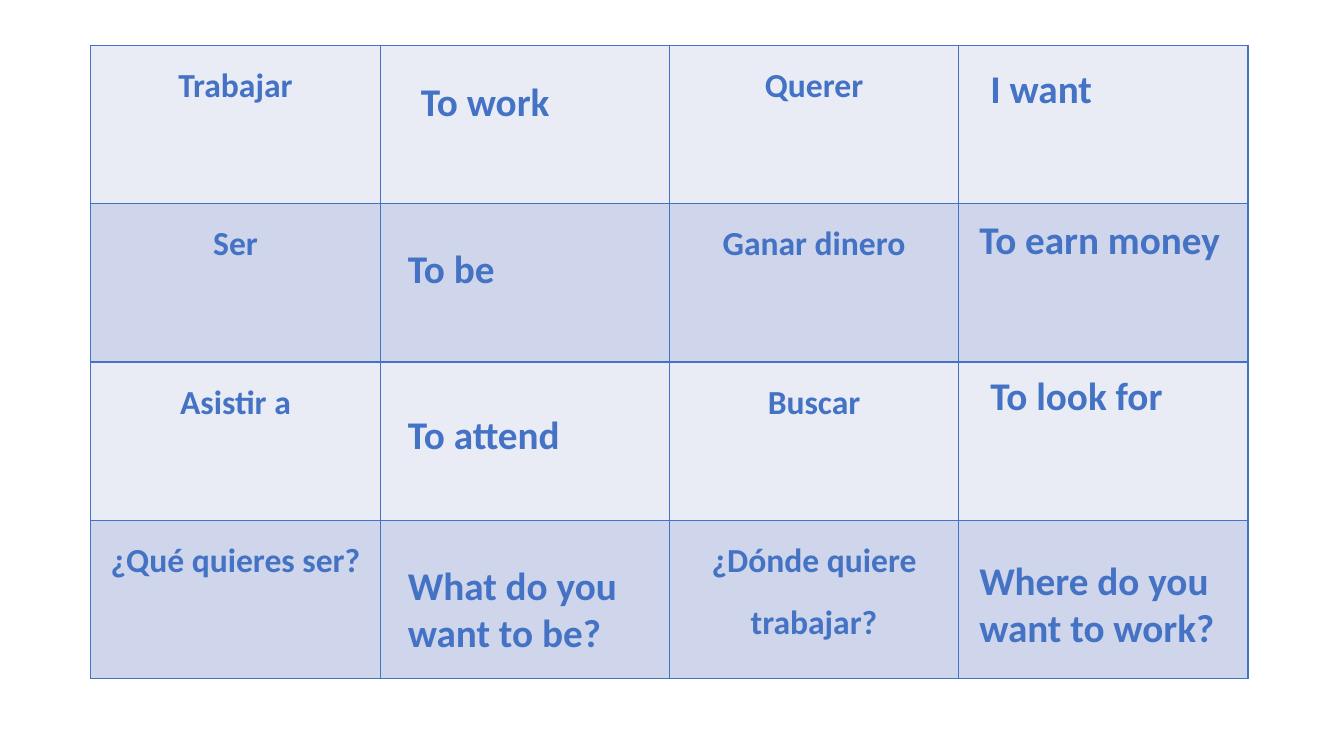
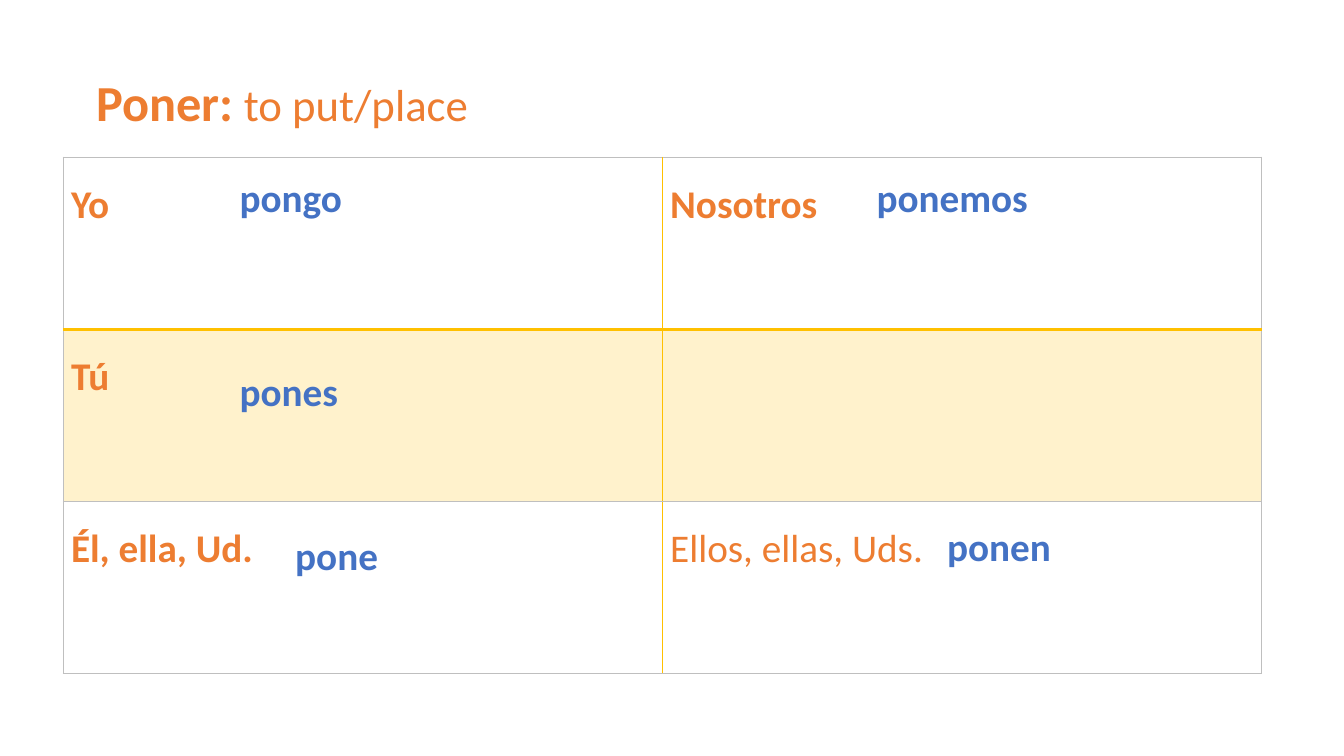
from lxml import etree
from pptx import Presentation
from pptx.dml.color import RGBColor
from pptx.enum.text import MSO_ANCHOR, MSO_AUTO_SIZE, PP_ALIGN
from pptx.oxml.ns import qn
from pptx.util import Cm, Pt

LEFT, CENTER = PP_ALIGN.LEFT, PP_ALIGN.CENTER
MIDDLE = MSO_ANCHOR.MIDDLE
FIT_SHAPE = MSO_AUTO_SIZE.SHAPE_TO_FIT_TEXT

FONT = "Calibri"
COLORS = {
    "blue": "4472C4",
    "orange": "ED7D31",
    "gold": "FFC000",
    "grey": "BFBFBF",
    "light_blue": "E9EBF5",
    "mid_blue": "CFD5EA",
    "cream": "FFF2CC",
}

VOCABULARY = [
    ["Trabajar", "", "Querer", ""],
    ["Ser", "", "Ganar dinero", ""],
    ["Asistir a", "", "Buscar", ""],
    ["¿Qué quieres ser?", "", "¿Dónde quiere trabajar?", ""],
]
TRANSLATIONS = [
    (10.36, 1.83, "To work"),
    (10.03, 6.02, "To be"),
    (10.03, 10.21, "To attend"),
    (10.03, 14.02, "What do you\nwant to be?"),
    (24.71, 1.5, "I want"),
    (24.43, 5.31, "To earn money"),
    (24.71, 9.22, "To look for"),
    (24.43, 13.89, "Where do you\nwant to work?"),
]
PRONOUNS = [
    ["Yo", "Nosotros"],
    ["Tú", ""],
    ["Él, ella, Ud.", "Ellos, ellas, Uds."],
]
VERB_FORMS = [
    (5.79, 4.24, "pongo"),
    (5.79, 9.12, "pones"),
    (7.19, 13.26, "pone"),
    (21.84, 4.24, "ponemos"),
    (23.62, 13.03, "ponen"),
]


def rgb(name):
    return RGBColor.from_string(COLORS[name])


def style_font(font, size, color, bold=True):
    font.name = FONT
    font.size = Pt(size)
    font.bold = bold
    font.color.rgb = rgb(color)


def set_border(cell, side, color, width=1):
    properties = cell._tc.get_or_add_tcPr()
    line = etree.SubElement(properties, qn(f"a:ln{side}"), w=str(Pt(width)))
    fill = etree.SubElement(line, qn("a:solidFill"))
    etree.SubElement(fill, qn("a:srgbClr"), val=COLORS[color])


def fill_cell(cell, color):
    if color:
        cell.fill.solid()
        cell.fill.fore_color.rgb = rgb(color)
    else:
        cell.fill.background()


def write_cell(cell, text, size, color, align):
    cell.margin_left = cell.margin_right = Cm(0.19)
    cell.margin_top = cell.margin_bottom = 0
    if text:
        cell.text = text
        para = cell.text_frame.paragraphs[0]
        para.alignment = align
        para.line_spacing = 1.5
        style_font(para.font, size, color)


def add_grid(page, words, left, top, column_width, row_height,
             size, color, align, row_fills, column_lines, row_lines):
    rows, columns = len(words), len(words[0])
    table = page.shapes.add_table(
        rows, columns, Cm(left), Cm(top),
        Cm(column_width * columns), Cm(row_height * rows)).table
    table.first_row = table.horz_banding = False
    for column in table.columns:
        column.width = Cm(column_width)
    for row in table.rows:
        row.height = Cm(row_height)
    for r, texts in enumerate(words):
        for c, text in enumerate(texts):
            cell = table.cell(r, c)
            write_cell(cell, text, size, color, align)
            set_border(cell, "L", *column_lines[c])
            set_border(cell, "R", *column_lines[c + 1])
            set_border(cell, "T", *row_lines[r])
            set_border(cell, "B", *row_lines[r + 1])
            fill_cell(cell, row_fills[r])
    return table


def add_box(page, left, top, width, height):
    box = page.shapes.add_textbox(Cm(left), Cm(top), Cm(width), Cm(height))
    box.text_frame.word_wrap = True
    box.text_frame.auto_size = FIT_SHAPE
    return box.text_frame


def add_answers(page, answers):
    for left, top, text in answers:
        height = 1.45 + 1.19 * text.count("\n")
        frame = add_box(page, left, top, 8.23, height)
        frame.text = text
        for para in frame.paragraphs:
            style_font(para.font, 28, "blue")


def add_title(page, verb, meaning):
    frame = add_box(page, 2.18, 1.65, 29, 1.8)
    frame.vertical_anchor = MIDDLE
    para = frame.paragraphs[0]
    for text, size, bold in ((verb, 36, True), (meaning, 32, False)):
        span = para.add_run()
        span.text = text
        style_font(span.font, size, "orange", bold)


def build_vocabulary(page):
    lines = [("blue",)] * 5
    add_grid(page, VOCABULARY, 2.29, 1.14, 7.29, 3.99, 24, "blue", CENTER,
             ["light_blue", "mid_blue"] * 2, lines, lines)
    add_answers(page, TRANSLATIONS)


def build_conjugation(page):
    table = add_grid(
        page, PRONOUNS, 1.6, 3.96, 15.1, 4.34, 28, "orange", LEFT,
        [None, "cream", None],
        [("grey",), ("gold",), ("grey",)],
        [("grey",), ("gold", 2), ("grey",), ("grey",)])
    table.cell(2, 1).text_frame.paragraphs[0].font.bold = False
    add_title(page, "Poner:", " to put/place")
    add_answers(page, VERB_FORMS)


def main():
    deck = Presentation()
    deck.slide_width, deck.slide_height = Cm(33.87), Cm(19.05)
    for build in (build_vocabulary, build_conjugation):
        build(deck.slides.add_slide(deck.slide_layouts[6]))
    deck.save("out.pptx")


if __name__ == "__main__":
    main()
